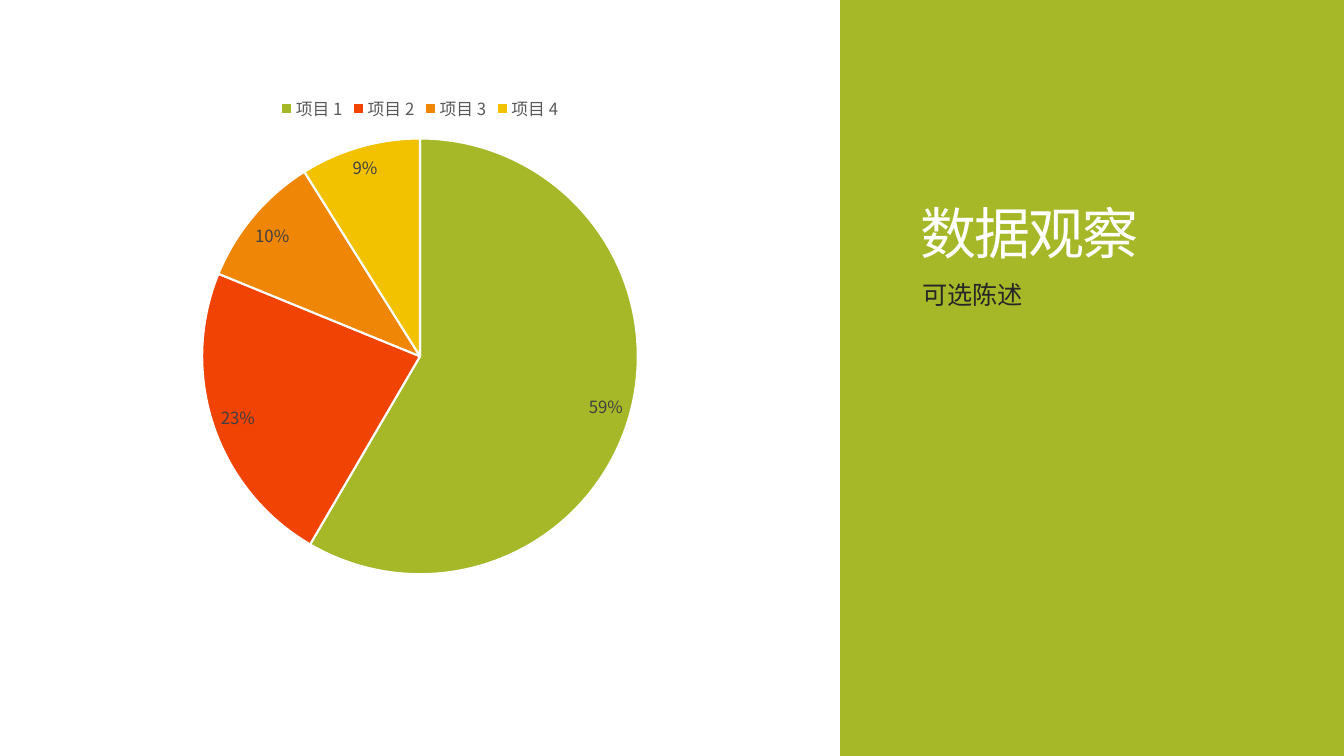
import pptx
import pptx.chart.data
import pptx.dml.color
import pptx.enum.chart
import pptx.enum.shapes
import pptx.enum.text
import pptx.oxml
import pptx.oxml.ns
import pptx.util

Cm = pptx.util.Cm
Pt = pptx.util.Pt
RGBColor = pptx.dml.color.RGBColor

FONT = "Noto Sans CJK SC"
GREEN = RGBColor(0xA6, 0xB7, 0x27)
RED = RGBColor(0xF0, 0x43, 0x04)
ORANGE = RGBColor(0xEF, 0x86, 0x06)
YELLOW = RGBColor(0xF2, 0xC1, 0x00)
WHITE = RGBColor(0xFF, 0xFF, 0xFF)
BLACK = RGBColor(0, 0, 0)
HEADING_INK = WHITE
STATEMENT_INK = RGBColor(0x26, 0x26, 0x26)
LABEL_INK = RGBColor(0x40, 0x40, 0x40)
LEGEND_INK = RGBColor(0x59, 0x59, 0x59)

HEADING = "数据观察"
STATEMENT = "可选陈述"
SERIES_NAME = "Series 1"
SHARES = [
    ("项目 1", 59, GREEN),
    ("项目 2", 23, RED),
    ("项目 3", 10, ORANGE),
    ("项目 4", 9, YELLOW),
]

SLIDE_WIDTH, SLIDE_HEIGHT = Cm(33.87), Cm(19.05)
PANEL_WIDTH = Cm(12.7)
PANEL_LEFT = SLIDE_WIDTH - PANEL_WIDTH
HEADING_BOX = (Cm(22.94), Cm(1.5), Cm(9.4), Cm(5.33))
STATEMENT_BOX = (Cm(22.99), Cm(6.99), Cm(9.45), Cm(8.69))
CHART_BOX = (Cm(2.12), Cm(2.12), Cm(16.93), Cm(12.7))


def style(font, size, ink):
    font.name = FONT
    font.size = Pt(size)
    font.color.rgb = ink
    east_asian = pptx.oxml.parse_xml(
        f'<a:ea {pptx.oxml.ns.nsdecls("a")} typeface="{FONT}"/>'
    )
    font._rPr.find(pptx.oxml.ns.qn("a:latin")).addnext(east_asian)


def add_text(slide, box, wording, size, ink, line_spacing, anchor):
    frame = slide.shapes.add_textbox(*box).text_frame
    frame.text = wording
    frame.word_wrap = True
    frame.vertical_anchor = anchor
    paragraph = frame.paragraphs[0]
    paragraph.line_spacing = line_spacing
    run = paragraph.runs[0]
    style(run.font, size, ink)
    return run


def add_panel(slide):
    panel = slide.shapes.add_shape(
        pptx.enum.shapes.MSO_SHAPE.RECTANGLE, PANEL_LEFT, 0, PANEL_WIDTH, SLIDE_HEIGHT
    )
    panel.shadow.inherit = False
    panel.fill.solid()
    panel.fill.fore_color.rgb = GREEN
    panel.line.fill.background()


def add_share_chart(slide):
    share_data = pptx.chart.data.CategoryChartData()
    share_data.categories = [item for item, _, _ in SHARES]
    share_data.add_series(SERIES_NAME, [share for _, share, _ in SHARES])
    chart = slide.shapes.add_chart(
        pptx.enum.chart.XL_CHART_TYPE.PIE, *CHART_BOX, share_data
    ).chart
    style(chart.font, 10, BLACK)
    chart.has_title = False
    chart.has_legend = True
    chart.legend.position = pptx.enum.chart.XL_LEGEND_POSITION.TOP
    chart.legend.include_in_layout = False
    style(chart.legend.font, 12, LEGEND_INK)

    pie = chart.plots[0]
    pie.vary_by_categories = True
    for index, (_, _, color) in enumerate(SHARES):
        wedge = pie.series[0].points[index].format
        wedge.fill.solid()
        wedge.fill.fore_color.rgb = color
        wedge.line.color.rgb = WHITE
        wedge.line.width = Pt(1.5)

    labels = pie.series[0].data_labels
    labels.show_value = True
    labels.number_format = '0"%"'
    labels.number_format_is_linked = False
    labels.position = pptx.enum.chart.XL_LABEL_POSITION.BEST_FIT
    style(labels.font, 12, LABEL_INK)


def main():
    deck = pptx.Presentation()
    deck.slide_width, deck.slide_height = SLIDE_WIDTH, SLIDE_HEIGHT
    slide = deck.slides.add_slide(deck.slide_layouts[6])
    add_panel(slide)
    anchors = pptx.enum.text.MSO_ANCHOR
    heading = add_text(slide, HEADING_BOX, HEADING, 40, HEADING_INK, 0.85, anchors.BOTTOM)
    heading.font._rPr.set("spc", "-120")
    add_text(slide, STATEMENT_BOX, STATEMENT, 18, STATEMENT_INK, 0.9, anchors.TOP)
    add_share_chart(slide)
    deck.save("out.pptx")


if __name__ == "__main__":
    main()
